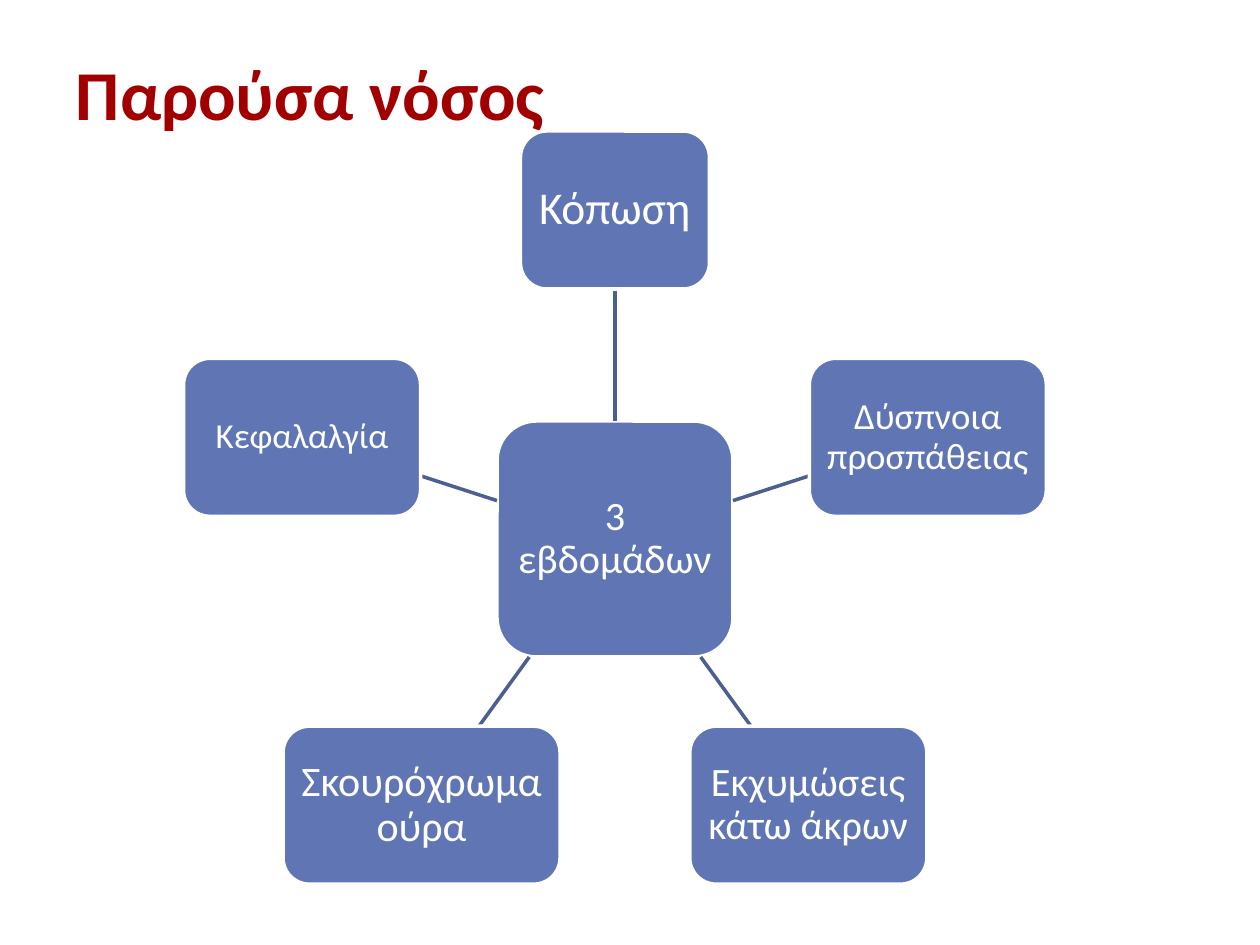
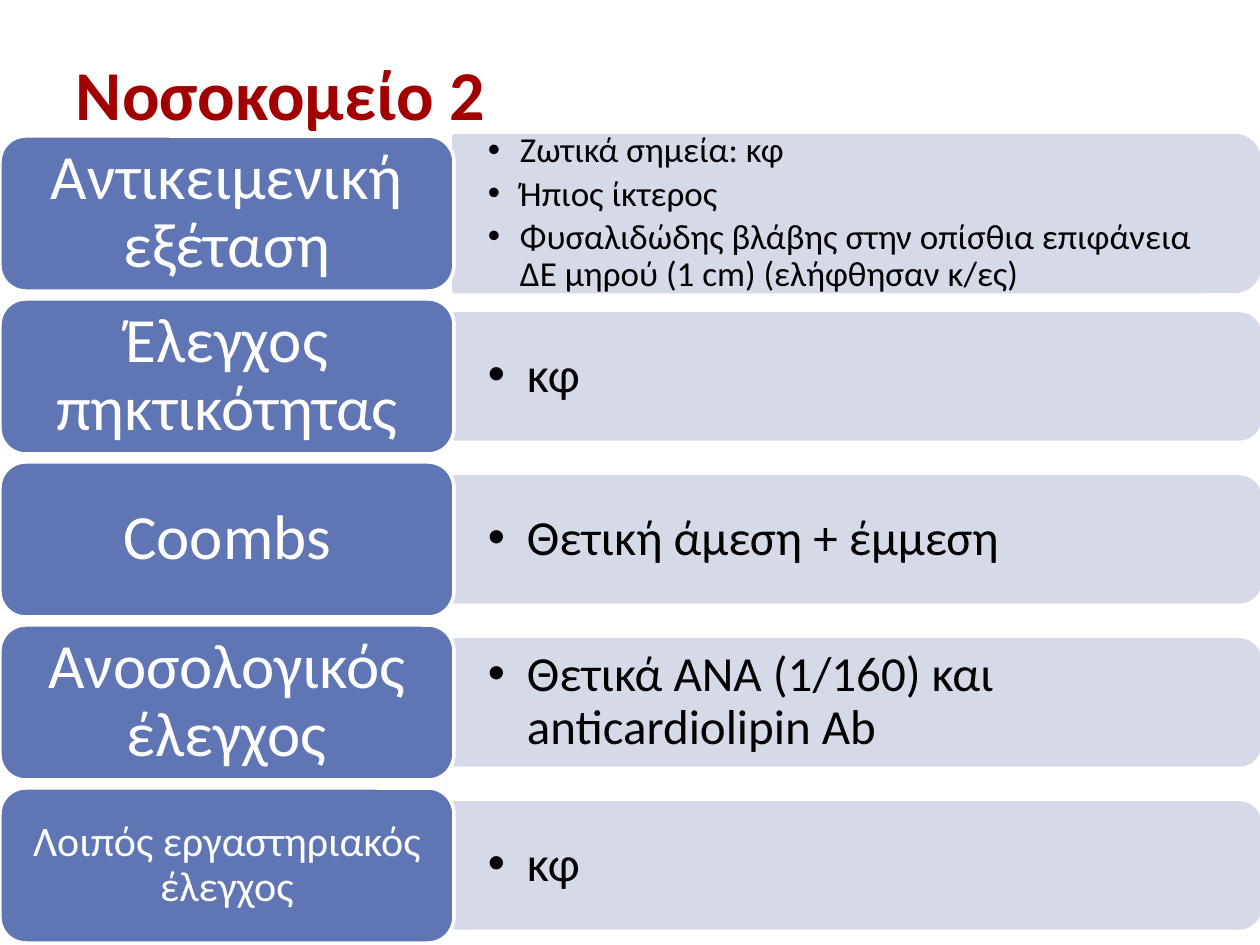
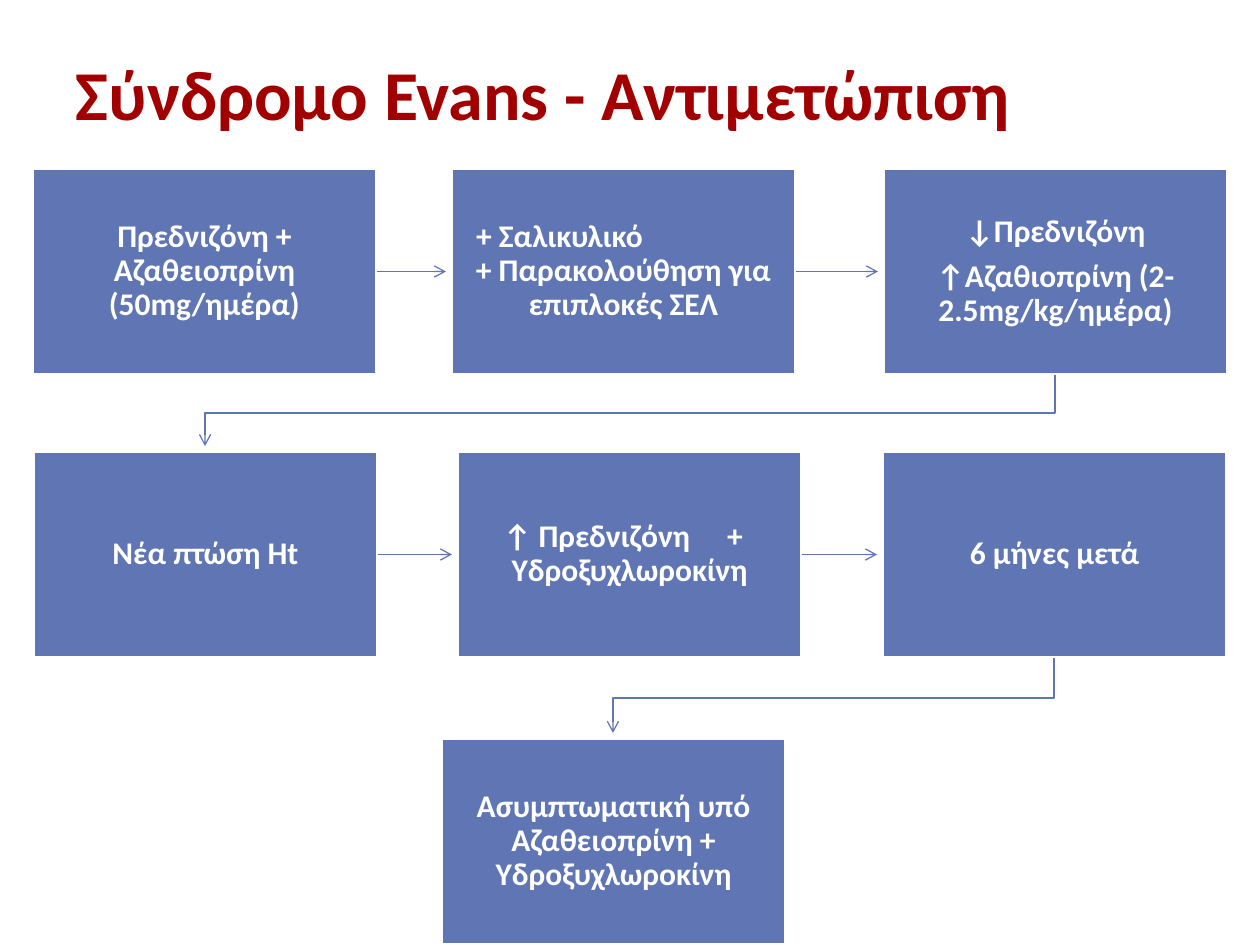
from math import cos, radians, sin

from lxml.etree import SubElement as add_sub
from pptx import Presentation
from pptx.dml.color import RGBColor as Rgb
from pptx.enum.shapes import MSO_CONNECTOR as Wire, MSO_SHAPE as Form
from pptx.enum.text import MSO_ANCHOR as Anchor, PP_ALIGN as Align
from pptx.oxml.ns import qn
from pptx.util import Emu, Pt

FONT = "Calibri"
RED = Rgb(0xA2, 0x00, 0x00)
BLUE = Rgb(0x60, 0x76, 0xB4)
NAVY = Rgb(0x4D, 0x5E, 0x90)
PALE = Rgb(0xD6, 0xDA, 0xE8)
WHITE = Rgb(0xFF, 0xFF, 0xFF)
BLACK = Rgb(0x00, 0x00, 0x00)

TOP, BOTTOM, RIGHT = 0, 2, 3
BOX_W, BOX_H = 345, 207
TIP_GAP = 5

HUB = (615, 539)
HUB_SIDE, NODE_H, RADIUS = 236, 158, 329
NODES = [
    ("Κόπωση", 26, 189),
    ("Δύσπνοια προσπάθειας", 21, 237),
    ("Εκχυμώσεις κάτω άκρων", 23, 237),
    ("Σκουρόχρωμα ούρα", 24, 277),
    ("Κεφαλαλγία", 20, 237),
]

EXAMS = [
    ("Αντικειμενική εξέταση", 36, 156, 20, 32, [
        "Ζωτικά σημεία: κφ",
        "Ήπιος ίκτερος",
        "Φυσαλιδώδης βλάβης στην οπίσθια επιφάνεια ΔΕ μηρού (1 cm) (ελήφθησαν κ/ες)",
    ]),
    ("Έλεγχος πηκτικότητας", 36, 125, 28, 39, ["κφ"]),
    ("Coombs", 36, 125, 28, 39, ["Θετική άμεση + έμμεση"]),
    ("Ανοσολογικός έλεγχος", 36, 125, 28, 39,
     ["Θετικά ΑΝΑ (1/160) και anticardiolipin Ab"]),
    ("Λοιπός εργαστηριακός έλεγχος", 24, 125, 28, 39, ["κφ"]),
]

STEPS = [
    (32, 168, ["Πρεδνιζόνη + Αζαθειοπρίνη (50mg/ημέρα)"]),
    (451, 168, ["+ Σαλικυλικό", "+ Παρακολούθηση για επιπλοκές ΣΕΛ"]),
    (883, 168, ["↓Πρεδνιζόνη", "↑Αζαθιοπρίνη (2-2.5mg/kg/ημέρα)"]),
    (33, 451, ["Νέα πτώση Ht"]),
    (457, 451, ["↑ Πρεδνιζόνη\t+", "Υδροξυχλωροκίνη"]),
    (882, 451, ["6 μήνες μετά"]),
    (441, 738, ["Ασυμπτωματική υπό Αζαθειοπρίνη + Υδροξυχλωροκίνη"]),
]


def px(n):
    return Emu(round(n * 914400 / 126))


def write(shape, lines, size, color, pad, bold=False, align=Align.CENTER,
          after=0.35, lead=0.9, hang=0):
    frame = shape.text_frame
    frame.word_wrap = True
    frame.vertical_anchor = Anchor.MIDDLE
    frame.margin_left = frame.margin_right = px(pad[0])
    frame.margin_top = frame.margin_bottom = px(pad[1])
    for i, line in enumerate(lines):
        para = frame.add_paragraph() if i else frame.paragraphs[0]
        para.text = line
        para.alignment = align
        para.line_spacing = lead
        para.space_after = Pt(size * after)
        if hang:
            props = para._p.get_or_add_pPr()
            props.set("marL", str(px(hang)))
            props.set("indent", str(-px(hang)))
            add_sub(props, qn("a:buFont"), typeface="Arial")
            add_sub(props, qn("a:buChar"), char="•")
        font = para.font
        font.name, font.size, font.bold = FONT, Pt(size), bold
        font.color.rgb = color


def push_left(para, indent, stop=None):
    para.alignment = Align.LEFT
    para.space_after = Pt(0)
    props = para._p.get_or_add_pPr()
    props.set("marL", "0")
    props.set("indent", str(px(indent)))
    if stop:
        tabs = props.makeelement(qn("a:tabLst"), {})
        add_sub(tabs, qn("a:tab"), pos=str(px(stop)), algn="l")
        props.find(qn("a:defRPr")).addprevious(tabs)


def add_text(slide, x, y, w, h, lines, size, color, pad, **style):
    box = slide.shapes.add_textbox(px(x), px(y), px(w), px(h))
    write(box, lines, size, color, pad, **style)


def add_box(slide, form, x, y, w, h, fill=BLUE, edge=WHITE):
    box = slide.shapes.add_shape(form, px(x), px(y), px(w), px(h))
    box.shadow.inherit = False
    box.fill.solid()
    box.fill.fore_color.rgb = fill
    box.line.color.rgb = edge
    box.line.width = Pt(2)
    return box


def add_line(slide, start, end, color, width):
    line = slide.shapes.add_connector(Wire.STRAIGHT, *map(px, start + end))
    line.line.color.rgb = color
    line.line.width = Pt(width)
    add_sub(line._element.spPr, qn("a:effectLst"))
    return line


def add_tip(shape):
    add_sub(shape.line._get_or_add_ln(), qn("a:tailEnd"), type="arrow")


def add_bend(slide, start, end):
    mid = (start[1] + end[1] + TIP_GAP) // 2
    pen = slide.shapes.build_freeform(px(start[0]), px(start[1]))
    turns = [(start[0], mid), (end[0], mid), end]
    pen.add_line_segments([(px(x), px(y)) for x, y in turns], close=False)
    bend = pen.convert_to_shape()
    bend.shadow.inherit = False
    bend.fill.background()
    bend.line.color.rgb = BLUE
    bend.line.width = Pt(0.75)
    add_tip(bend)


def add_page(deck, title):
    slide = deck.slides.add_slide(deck.slide_layouts[6])
    add_text(slide, 63, 38, 1134, 110, [title], 40, RED, (13, 6),
             bold=True, align=Align.LEFT, after=0, lead=1.0)
    return slide


def reach(dx, dy, w, h):
    return min(size / 2 / abs(d) for d, size in ((dx, w), (dy, h)) if abs(d) > 0.01)


def draw_wheel(slide):
    cx, cy = HUB
    hub = add_box(slide, Form.ROUNDED_RECTANGLE, cx - HUB_SIDE // 2,
                  cy - HUB_SIDE // 2, HUB_SIDE, HUB_SIDE)
    write(hub, ["3 εβδομάδων"], 23, WHITE, (8, 8))
    for i, (label, size, w) in enumerate(NODES):
        turn = radians(i * 360 / len(NODES))
        dx, dy = sin(turn), -cos(turn)
        near = reach(dx, dy, HUB_SIDE, HUB_SIDE)
        far = RADIUS - reach(dx, dy, w, NODE_H)
        link = add_line(slide, (cx + near * dx, cy + near * dy),
                        (cx + far * dx, cy + far * dy), NAVY, 2)
        node = add_box(slide, Form.ROUNDED_RECTANGLE, cx + RADIUS * dx - w / 2,
                       cy + RADIUS * dy - NODE_H / 2, w, NODE_H)
        write(node, [label], size, WHITE, (8, 8))
        if i == 0:
            link.begin_connect(hub, TOP)
            link.end_connect(node, BOTTOM)


def draw_exams(slide):
    left, wide, tall, pitch = 454, 806, 155, 163
    for i, (label, size, deep, small, hang, notes) in enumerate(EXAMS):
        y = 136 + i * pitch
        mid = y + tall / 2
        panel = add_box(slide, Form.ROUND_2_SAME_RECTANGLE,
                        left + (wide - deep) / 2, mid - wide / 2,
                        deep, wide, PALE, PALE)
        panel.rotation = 90
        add_text(slide, left, mid - deep / 2, 799, deep, notes, small, BLACK,
                 (34, 18), align=Align.LEFT, after=0.15, hang=hang)
        head = add_box(slide, Form.ROUNDED_RECTANGLE, 0, y, left, tall)
        write(head, [label], size, WHITE, (19, 9))


def draw_steps(slide):
    boxes = []
    for x, y, lines in STEPS:
        box = add_box(slide, Form.RECTANGLE, x, y, BOX_W, BOX_H)
        write(box, lines, 18, WHITE, (18, 18), bold=True)
        boxes.append(box)
    push_left(boxes[1].text_frame.paragraphs[0], 7)
    push_left(boxes[4].text_frame.paragraphs[0], 28, 267)
    for box, (x, y, _), (next_x, next_y, _) in zip(boxes, STEPS, STEPS[1:]):
        if y == next_y:
            mid = y + BOX_H / 2
            arrow = add_line(slide, (x + BOX_W, mid), (next_x - TIP_GAP, mid),
                             BLUE, 0.75)
            arrow.begin_connect(box, RIGHT)
            add_tip(arrow)
        else:
            add_bend(slide, (x + BOX_W // 2, y + BOX_H),
                     (next_x + BOX_W // 2, next_y - TIP_GAP))


def main():
    deck = Presentation()
    deck.slide_width, deck.slide_height = px(1260), px(945)
    draw_wheel(add_page(deck, "Παρούσα νόσος"))
    draw_exams(add_page(deck, "Νοσοκομείο 2"))
    draw_steps(add_page(deck, "Σύνδρομο Evans - Αντιμετώπιση"))
    deck.save("out.pptx")


if __name__ == "__main__":
    main()
